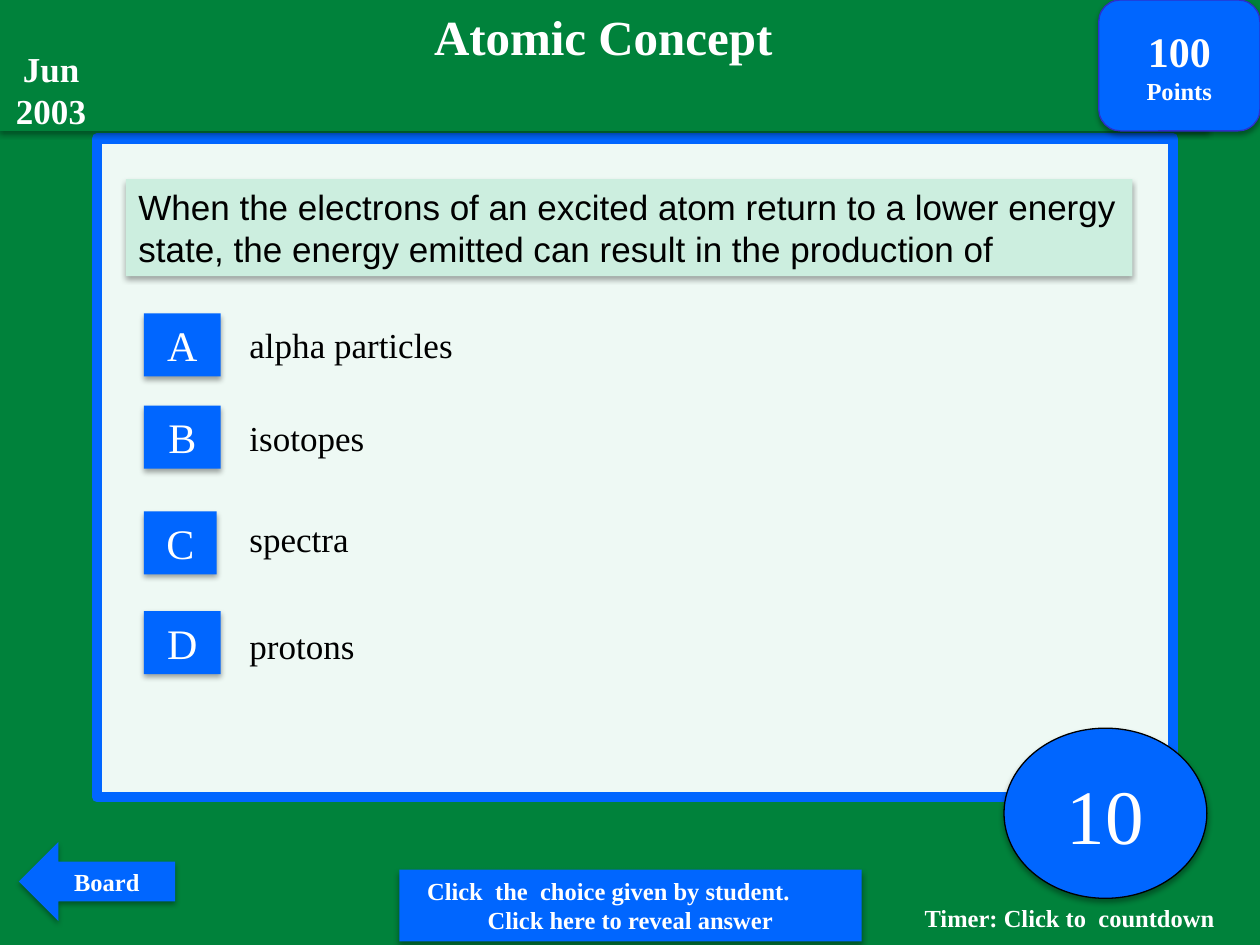
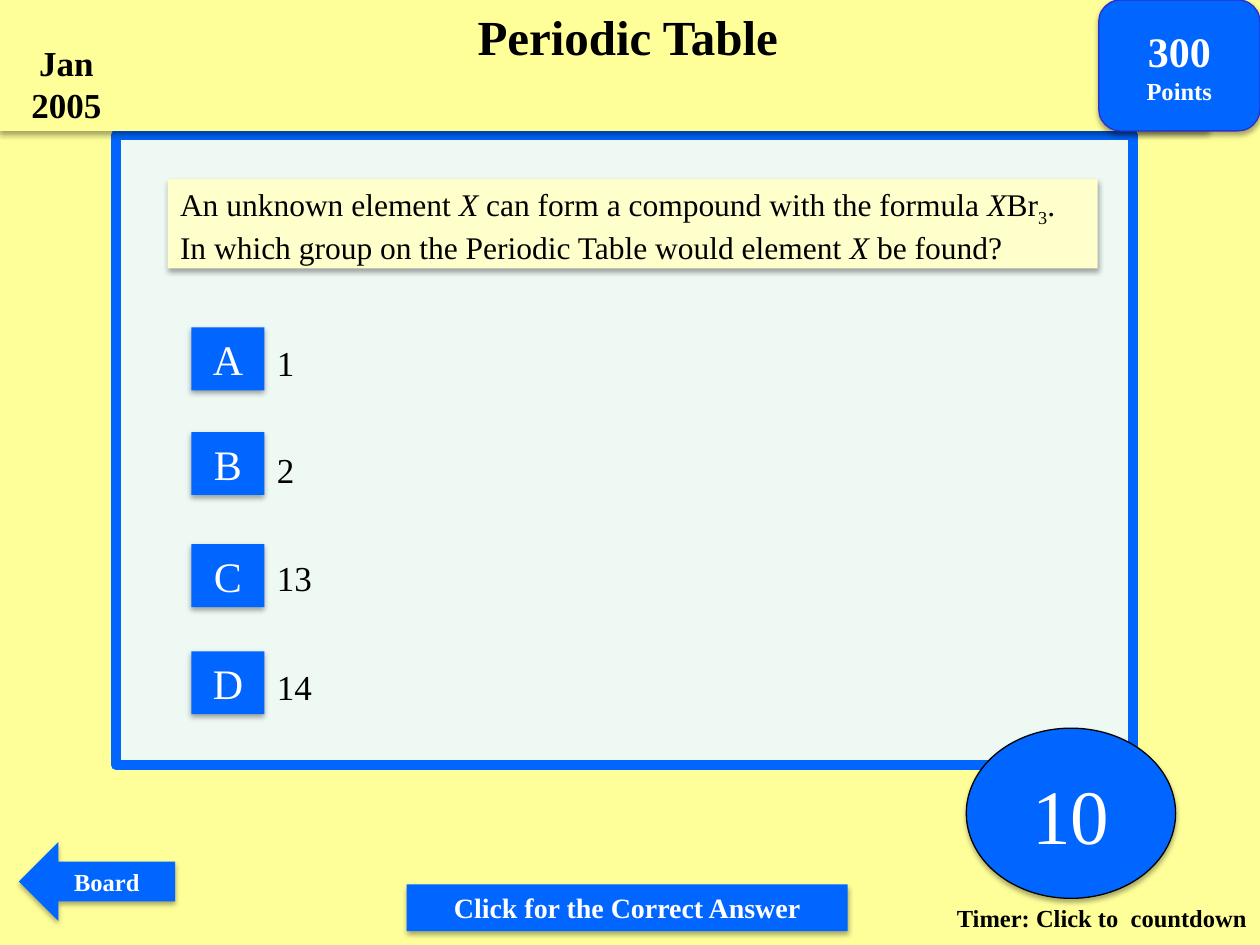
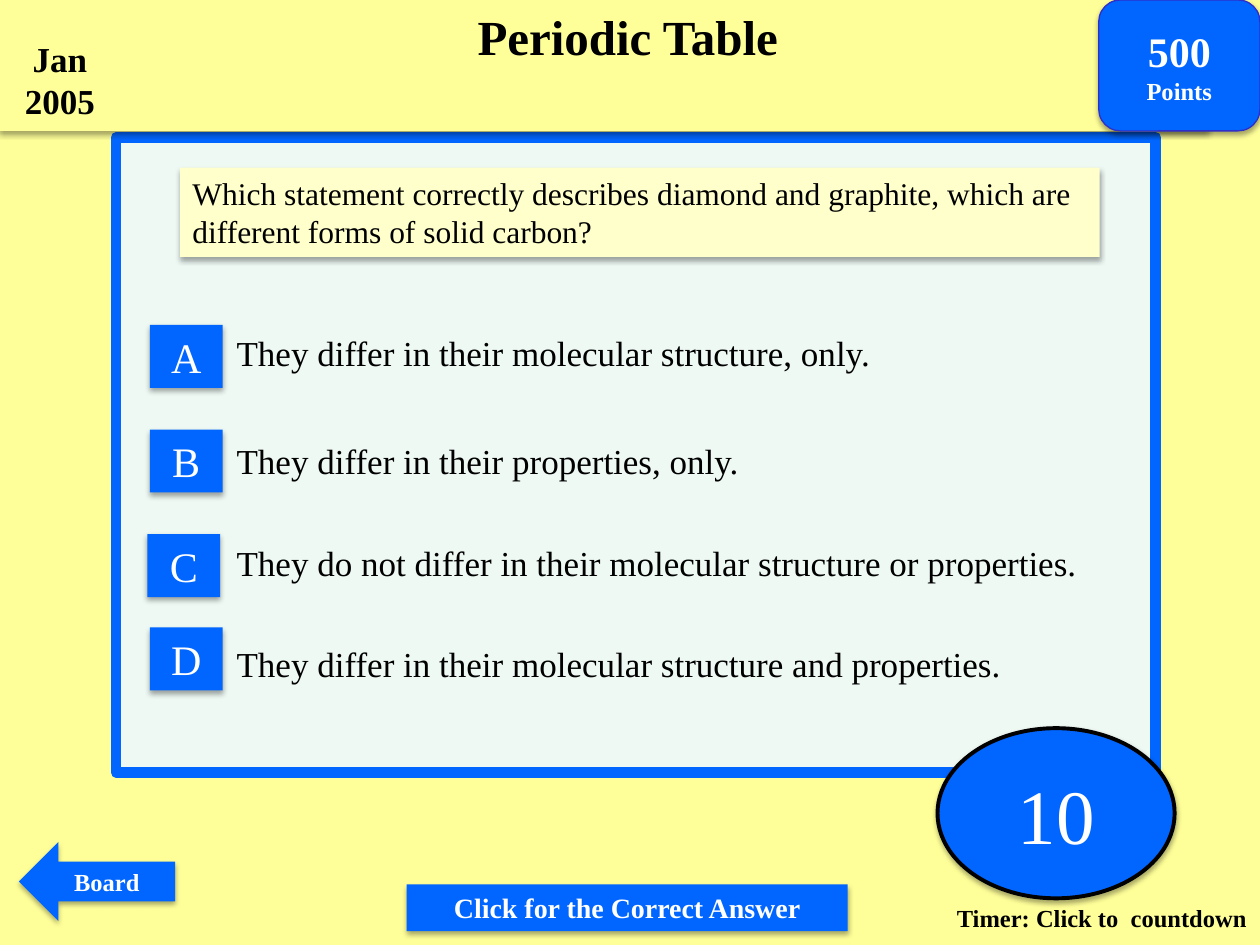
from lxml import etree
from pptx import Presentation
from pptx.dml.color import RGBColor
from pptx.enum.shapes import MSO_SHAPE
from pptx.enum.text import MSO_ANCHOR, PP_ALIGN
from pptx.oxml.ns import qn
from pptx.util import Cm, Pt

RECT, ROUND = MSO_SHAPE.RECTANGLE, MSO_SHAPE.ROUNDED_RECTANGLE
OVAL, ARROW = MSO_SHAPE.OVAL, MSO_SHAPE.LEFT_ARROW
LEFT, CENTER = PP_ALIGN.LEFT, PP_ALIGN.CENTER
TOP, MIDDLE = MSO_ANCHOR.TOP, MSO_ANCHOR.MIDDLE

COLORS = {
    "green": "00823B", "mint": "CCEEDF", "yellow": "FFFF99", "cream": "FFFFCC",
    "panel": "EEF9F4", "blue": "0066FF", "badge edge": "2E2ECB",
    "white": "FFFFFF", "black": "000000",
}
SERIF, SANS = "Times New Roman", "Arial"

# Positions are (left, top, width, height) in cm.
BAND = (-0.03, 0, 24.38, 2.64)
BADGE = (22.15, 0, 3.25, 2.64)
BOARD = (0.38, 16.97, 3.15, 1.6)
CHIP_HEIGHT = 1.27

# Each theme: page, question fill, text on the page, left inset of the title
# (pt), left edge of the timer label, reveal button with its text size.
THEMES = {
    "Atomic Concept": dict(page="green", question="mint", ink="white", title_inset=7.2,
                           timer_left=18.25, reveal_at=(8.05, 17.53, 9.32, 1.45), reveal_size=14,
                           reveal=["Click  the  choice given by student.",
                                   "Click here to reveal answer"]),
    "Periodic Table": dict(page="yellow", question="cream", ink="black", title_inset=35.2,
                           timer_left=18.9, reveal_at=(8.2, 17.83, 8.89, 0.94), reveal_size=16,
                           reveal=["Click for the Correct Answer"]),
}

# Questions are lists of (text, style) runs; chips are (left, top, width);
# gaps are the points between successive answers.
QUIZ = [
    dict(topic="Atomic Concept", points="100", date="Jun 2003", date_at=(0, 0.84, 2.06, 1.96),
         panel_at=(1.96, 2.79, 21.69, 13.28),
         question=[("When the electrons of an excited atom return to a lower energy state, "
                    "the energy emitted can result in the production of", "")],
         question_at=(2.54, 3.61, 20.29, 1.96), question_font=(SANS, 20),
         answers=["alpha particles", "isotopes", "spectra", "protons"],
         answers_at=(4.78, 6.4, 7.82, 7.21), gaps=[29, 34, 37],
         chips=[(2.9, 6.32, 1.55), (2.9, 8.18, 1.55), (2.9, 10.31, 1.47), (2.9, 12.32, 1.55)],
         countdown_at=(20.24, 14.68, 4.09, 3.43), countdown_line=0.75),
    dict(topic="Periodic Table", points="300", date="Jan 2005", date_at=(0.03, 0.71, 2.62, 1.96),
         panel_at=(2.34, 2.72, 20.5, 12.7),
         question=[("An unknown element ", ""), ("X ", "italic"),
                   ("can form a compound with the formula ", ""), ("X", "italic"),
                   ("Br", ""), ("3", "subscript"),
                   (". In which group on the Periodic Table would element ", ""),
                   ("X ", "italic"), ("be found?", "")],
         question_at=(3.38, 3.61, 18.75, 1.8), question_font=(SERIF, 18),
         answers=["1", "2", "13", "14"],
         answers_at=(5.33, 6.76, 7.82, 8.76), gaps=[37, 38, 38],
         chips=[(3.86, top, 1.47) for top in (6.6, 8.71, 10.97, 13.13)],
         countdown_at=(19.48, 14.68, 4.22, 3.43), countdown_line=0.75),
    dict(topic="Periodic Table", points="500", date="Jan 2005", date_at=(-0.1, 0.64, 2.62, 1.96),
         panel_at=(2.34, 2.77, 20.96, 12.8),
         question=[("Which statement correctly describes diamond and graphite, "
                    "which are different forms of solid carbon?", "")],
         question_at=(3.63, 3.38, 18.54, 1.8), question_font=(SERIF, 18),
         answers=["They differ in their molecular structure, only.",
                  "They differ in their properties, only.",
                  "They do not differ in their molecular structure or properties.",
                  "They differ in their molecular structure and properties."],
         answers_at=(4.52, 6.55, 17.55, 8.46), gaps=[38, 34, 34],
         chips=[(3.02, 6.55, 1.47), (3.02, 8.66, 1.47), (2.97, 10.77, 1.47), (3.02, 12.65, 1.47)],
         countdown_at=(18.9, 14.68, 4.78, 3.43), countdown_line=2.25),
]


def rgb(name):
    return RGBColor.from_string(COLORS[name])


def cast_shadow(shape):
    effects = shape._element.spPr.find(qn("a:effectLst"))
    shadow = etree.SubElement(effects, qn("a:outerShdw"), blurRad="40000", dist="23000",
                              dir="5400000", rotWithShape="0")
    color = etree.SubElement(shadow, qn("a:srgbClr"), val=COLORS["black"])
    etree.SubElement(color, qn("a:alpha"), val="35000")


def add_box(slide, preset, at, fill, line=None, shadow=True):
    """Add a filled shape; line is (colour, points)."""
    shape = slide.shapes.add_shape(preset, *map(Cm, at))
    shape.fill.solid()
    shape.fill.fore_color.rgb = rgb(fill)
    if line:
        shape.line.color.rgb = rgb(line[0])
        shape.line.width = Pt(line[1])
    else:
        shape.line.fill.background()
    shape.shadow.inherit = False
    if shadow:
        cast_shadow(shape)
    return shape


def add_label(slide, at):
    return slide.shapes.add_textbox(*map(Cm, at))


def write(shape, lines, size, ink, bold=False, font=SERIF, align=CENTER, anchor=TOP, wrap=True):
    """Fill a shape with lines, each a string or a list of (text, style) runs."""
    frame = shape.text_frame
    frame.word_wrap = wrap
    frame.vertical_anchor = anchor
    for number, line in enumerate(lines):
        paragraph = frame.add_paragraph() if number else frame.paragraphs[0]
        paragraph.alignment = align
        paragraph.font.name = font
        paragraph.font.size = Pt(size)
        paragraph.font.bold = bold
        paragraph.font.color.rgb = rgb(ink)
        for text, style in [(line, "")] if isinstance(line, str) else line:
            run = paragraph.add_run()
            run.text = text
            if style == "italic":
                run.font.italic = True
            elif style == "subscript":
                run._r.get_or_add_rPr().set("baseline", "-25000")
    return frame


def add_reveal(slide, theme):
    button = add_box(slide, RECT, theme["reveal_at"], "blue")
    frame = write(button, theme["reveal"], theme["reveal_size"], "white", bold=True)
    if len(theme["reveal"]) > 1:
        hint = frame.paragraphs[0]
        hint.alignment = LEFT
        hint._p.get_or_add_pPr().set("marL", str(Pt(8.8)))


def add_choices(slide, quiz):
    answers = write(add_label(slide, quiz["answers_at"]), quiz["answers"], 20, "black", align=LEFT)
    for answer, gap in zip(answers.paragraphs[1:], quiz["gaps"]):
        answer.space_before = Pt(gap)
    for letter, chip in zip("ABCD", quiz["chips"]):
        write(add_box(slide, RECT, (*chip, CHIP_HEIGHT), "blue"), [letter], 24, "white")


def add_header(slide, quiz, theme):
    band = add_box(slide, RECT, BAND, theme["page"])
    write(band, [quiz["topic"]], 28, theme["ink"], bold=True).margin_left = Pt(theme["title_inset"])
    badge = add_box(slide, ROUND, BADGE, "blue", ("badge edge", 0.75))
    score = write(badge, [quiz["points"], "Points"], 24, "white", bold=True, anchor=MIDDLE, wrap=False)
    score.paragraphs[1].font.size = Pt(14)
    write(add_label(slide, quiz["date_at"]), [quiz["date"]], 20, theme["ink"], bold=True)


def add_quiz_slide(deck, quiz):
    theme = THEMES[quiz["topic"]]
    slide = deck.slides.add_slide(deck.slide_layouts[6])
    slide.background.fill.solid()
    slide.background.fill.fore_color.rgb = rgb(theme["page"])

    add_box(slide, RECT, quiz["panel_at"], "panel", ("blue", 6), shadow=False)
    timer = add_label(slide, (theme["timer_left"], 18.08, 6.63, 0.86))
    write(timer, ["Timer: Click to  countdown"], 14, theme["ink"], bold=True)
    add_reveal(slide, theme)
    countdown = add_box(slide, OVAL, quiz["countdown_at"], "blue", ("black", quiz["countdown_line"]))
    write(countdown, ["10"], 44, "white", anchor=MIDDLE, wrap=False)
    add_choices(slide, quiz)
    font, size = quiz["question_font"]
    question = add_box(slide, RECT, quiz["question_at"], theme["question"])
    write(question, [quiz["question"]], size, "black", font=font, align=LEFT)
    add_header(slide, quiz, theme)
    board = add_box(slide, ARROW, BOARD, "blue")
    write(board, ["Board"], 14, "white", bold=True, anchor=MIDDLE, wrap=False)


def main():
    deck = Presentation()
    deck.slide_width, deck.slide_height = Cm(25.4), Cm(19.05)
    for quiz in QUIZ:
        add_quiz_slide(deck, quiz)
    deck.save("out.pptx")


if __name__ == "__main__":
    main()
